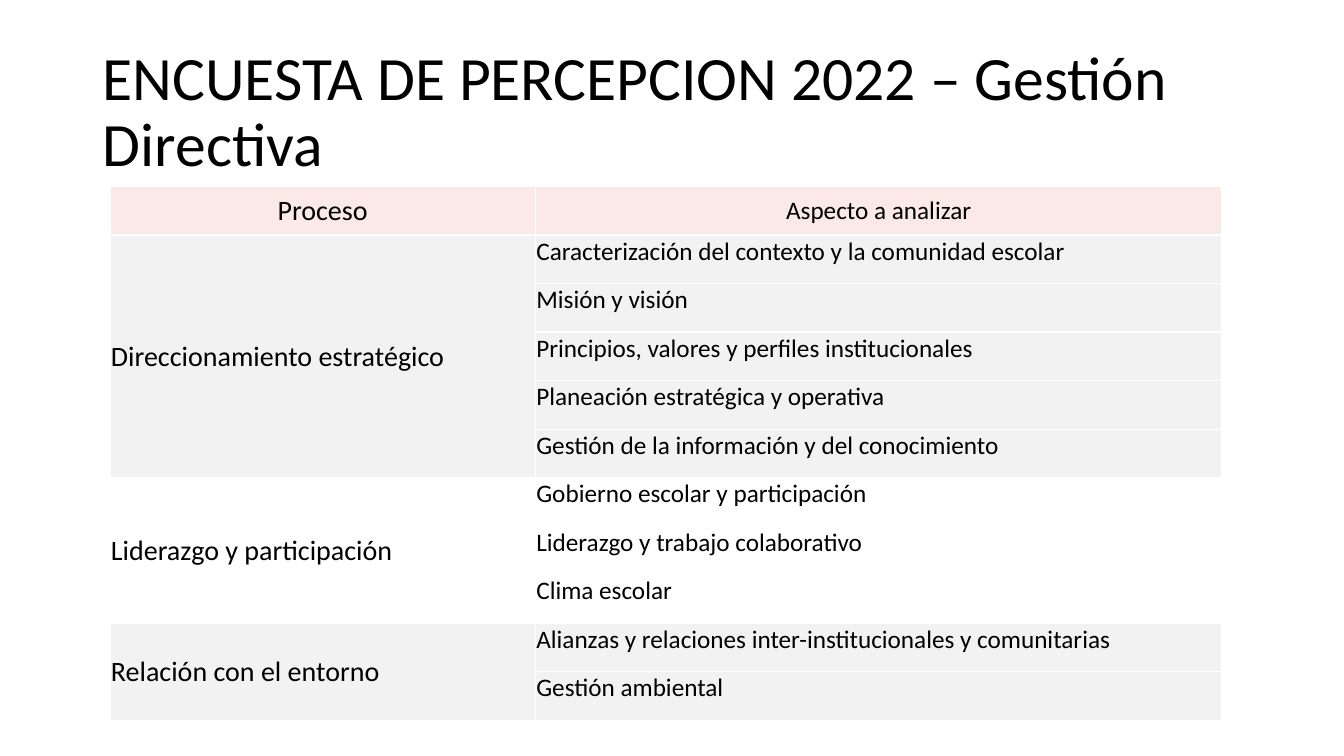
"""Build the slide listing the processes and aspects of the 2022 perception survey."""
import pptx
import pptx.dml.color
import pptx.enum.text
import pptx.oxml
import pptx.oxml.ns
import pptx.util

Inches = pptx.util.Inches
Pt = pptx.util.Pt
RGBColor = pptx.dml.color.RGBColor
ALIGN = pptx.enum.text.PP_ALIGN
ANCHOR = pptx.enum.text.MSO_ANCHOR

BLACK = RGBColor(0x00, 0x00, 0x00)
WHITE = RGBColor(0xFF, 0xFF, 0xFF)
PINK = RGBColor(0xFB, 0xE9, 0xE8)
GREY = RGBColor(0xF2, 0xF2, 0xF2)

PROCESSES = [
    ("Direccionamiento estratégico", GREY, [
        "Caracterización del contexto y la comunidad escolar",
        "Misión y visión",
        "Principios, valores y perfiles institucionales",
        "Planeación estratégica y operativa",
        "Gestión de la información y del conocimiento",
    ]),
    ("Liderazgo y participación", WHITE, [
        "Gobierno escolar y participación",
        "Liderazgo y trabajo colaborativo",
        "Clima escolar",
    ]),
    ("Relación con el entorno", GREY, [
        "Alianzas y relaciones inter-institucionales y comunitarias",
        "Gestión ambiental",
    ]),
]
CELL_FORMAT = {
    "margin_left": Inches(0.01),
    "margin_right": Inches(0.01),
    "margin_top": Inches(0.01),
    "margin_bottom": 0,
}


def write_text(frame, text, size, align):
    paragraph = frame.paragraphs[0]
    paragraph.alignment = align
    run = paragraph.add_run()
    run.text = text
    for name, value in {"size": Pt(size), "name": "Calibri", "bold": False}.items():
        setattr(run.font, name, value)
    run.font.color.rgb = BLACK
    return paragraph


def fill_cell(cell, text, size, align, anchor, color):
    for name, value in CELL_FORMAT.items():
        setattr(cell, name, value)
    cell.vertical_anchor = anchor
    cell.fill.solid()
    cell.fill.fore_color.rgb = color
    if text:
        write_text(cell.text_frame, text, size, align)
    properties = cell._tc.get_or_add_tcPr()
    for position, side in enumerate(("lnL", "lnR", "lnT", "lnB")):
        border = pptx.oxml.parse_xml(
            f'<a:{side} {pptx.oxml.ns.nsdecls("a")} w="{Pt(1)}">'
            f'<a:solidFill><a:srgbClr val="{WHITE}"/></a:solidFill></a:{side}>'
        )
        properties.insert(position, border)


presentation = pptx.Presentation()
presentation.slide_width = Inches(13.33)
presentation.slide_height = Inches(7.5)
slide = presentation.slides.add_slide(presentation.slide_layouts[5])

title = slide.shapes.title
title_box = {"left": 0.92, "top": 0.4, "width": 11.5, "height": 1.45}
for name, value in title_box.items():
    setattr(title, name, Inches(value))
title.text_frame.vertical_anchor = ANCHOR.MIDDLE
heading = write_text(
    title.text_frame, "ENCUESTA DE PERCEPCION 2022 – Gestión Directiva", 44, ALIGN.LEFT
)
heading.line_spacing = 0.9

row_count = 1 + sum(len(aspects) for _, _, aspects in PROCESSES)
survey = slide.shapes.add_table(
    row_count, 2, Inches(1.09), Inches(1.85), Inches(11.03), Inches(5.3)
).table
survey.first_row = False
survey.horz_banding = False
for column, width in zip(survey.columns, (4.22, 6.81)):
    column.width = Inches(width)

fill_cell(survey.cell(0, 0), "Proceso", 20, ALIGN.CENTER, ANCHOR.MIDDLE, PINK)
fill_cell(survey.cell(0, 1), "Aspecto a analizar", 18, ALIGN.CENTER, ANCHOR.MIDDLE, PINK)

row = 1
for process, color, aspects in PROCESSES:
    survey.cell(row, 0).merge(survey.cell(row + len(aspects) - 1, 0))
    for offset, aspect in enumerate(aspects):
        label = "" if offset else process
        fill_cell(survey.cell(row + offset, 0), label, 20, ALIGN.LEFT, ANCHOR.MIDDLE, color)
        fill_cell(survey.cell(row + offset, 1), aspect, 18, ALIGN.JUSTIFY, ANCHOR.TOP, color)
    row += len(aspects)

presentation.save("out.pptx")
